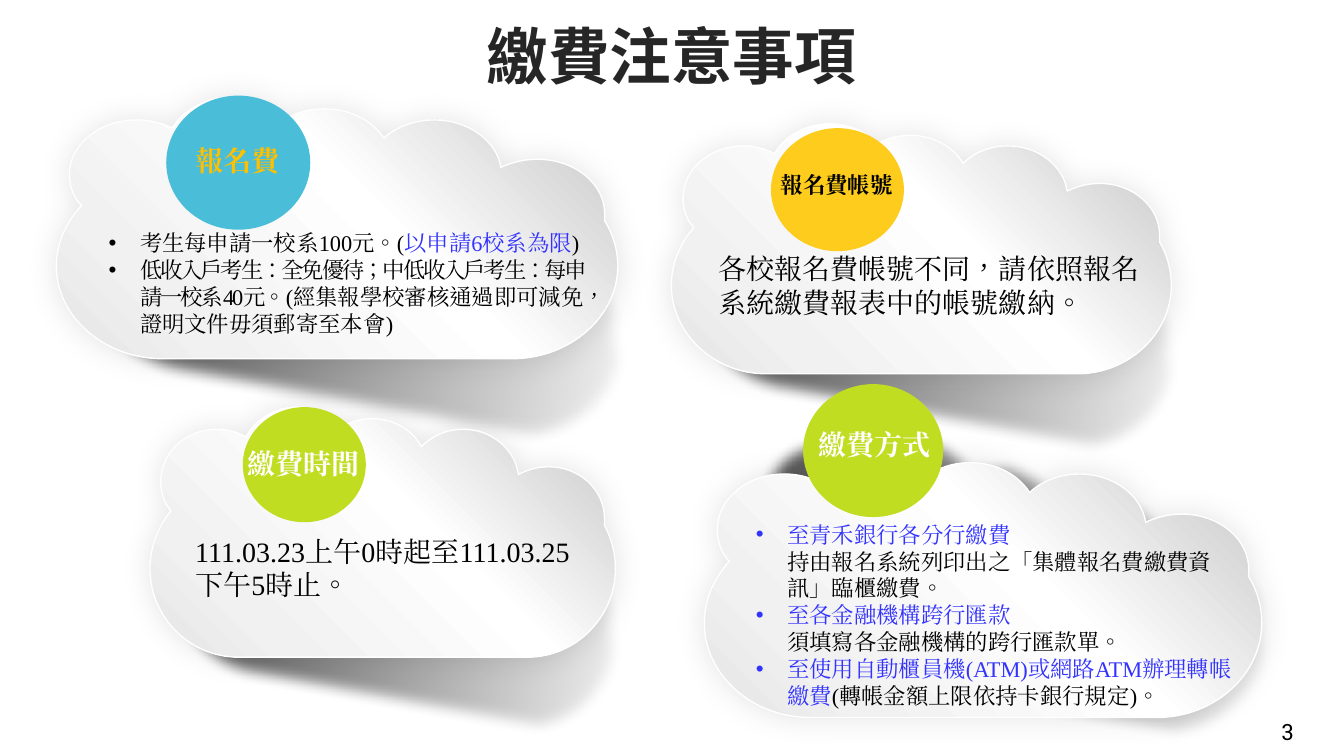
from dataclasses import dataclass
from typing import NamedTuple

from lxml import etree
from pptx import Presentation
from pptx.dml.color import RGBColor
from pptx.enum.shapes import MSO_SHAPE
from pptx.enum.text import MSO_ANCHOR, PP_ALIGN
from pptx.oxml import parse_xml
from pptx.oxml.ns import qn
from pptx.util import Cm, Pt

OVAL = MSO_SHAPE.OVAL
LEFT, CENTER = PP_ALIGN.LEFT, PP_ALIGN.CENTER
TOP, MIDDLE = MSO_ANCHOR.TOP, MSO_ANCHOR.MIDDLE
NAMESPACE = 'xmlns:a="http://schemas.openxmlformats.org/drawingml/2006/main"'
SERIF, SANS, SLAB = "Times New Roman", "Noto Sans CJK SC", "Roboto Slab"
BLACK, WHITE, BLUE, GOLD = "000000", "FFFFFF", "3333FF", "FFC000"
CYAN, YELLOW, LIME, CHARCOAL = "4ABDD9", "FDCC1C", "C1DD21", "262626"

CLOUD_WIDTH, CLOUD_HEIGHT = 557, 260
CLOUD_START = (176, 0)
CLOUD_SEGMENTS = (
    (198, 0, 217, 8, 229, 21),
    (240, 15, 252, 12, 266, 12),
    (292, 12, 314, 24, 325, 41),
    (337, 30, 355, 23, 375, 23),
    (409, 23, 437, 44, 441, 70),
    (452, 65, 464, 62, 477, 62),
    (514, 62, 544, 86, 544, 116),
    (544, 118, 544, 121, 544, 123),
    (552, 136, 557, 151, 557, 168),
    (557, 218, 510, 260, 452, 260),
    (106, 260),
    (47, 260, 0, 218, 0, 168),
    (0, 145, 10, 124, 25, 108),
    (17, 100, 13, 89, 13, 77),
    (13, 47, 43, 23, 80, 23),
    (93, 23, 105, 26, 115, 31),
    (126, 13, 149, 0, 176, 0),
)


class Box(NamedTuple):
    left: float
    top: float
    width: float
    height: float

    def lengths(self):
        return [Cm(value) for value in self]


class Stop(NamedTuple):
    position: int
    color: str
    opacity: int = 100


class Span(NamedTuple):
    text: str
    color: str = BLACK
    spacing: float = 0


@dataclass
class Topic:
    cloud: Box
    shade_offset: tuple[float, float]
    badge: Box
    badge_color: str
    label: Box
    label_text: str
    label_color: str
    body: Box
    paragraphs: list[list[Span]]
    label_size: int = 20
    label_align: PP_ALIGN = LEFT
    body_size: int = 20
    bulleted: bool = False


CLOUD_STOPS = [Stop(6, "CCCCCC"), Stop(43, WHITE), Stop(80, "F1F1F1"), Stop(100, "E4E4E4")]
SHADE_STOPS = [Stop(0, BLACK, 76), Stop(100, BLACK, 0)]
SHADE_ROTATION = 10.5
GLOW = ('<a:outerShdw %s blurRad="279400" dist="0" dir="0" algn="ctr" rotWithShape="0">'
        '<a:srgbClr val="000000"><a:alpha val="11000"/></a:srgbClr></a:outerShdw>' % NAMESPACE)
SOFT_EDGE = '<a:softEdge %s rad="127000"/>' % NAMESPACE

TOPICS = [
    Topic(Box(1.42, 2.44, 14.15, 6.6), (0.64, 1.45), Box(4.19, 2.41, 3.63, 3.38), CYAN,
          Box(4.11, 3.66, 3.76, 0.99), "報名費", GOLD, Box(2.49, 5.66, 12.93, 3.68),
          [[Span("考生每申請一校系100元。("), Span("以申請6校系為限", BLUE), Span(")")],
           [Span("低收入戶考生：全免優待；中低收入戶考生：每申請一校系40元。", spacing=-1.5),
            Span("(經集報學校審核通過即可減免，證明文件毋須郵寄至本會)")]],
          label_align=CENTER, body_size=16, bulleted=True),
    Topic(Box(16.92, 3.12, 12.6, 6.3), (0.56, 1.4), Box(19.43, 3.23, 3.35, 3.1), YELLOW,
          Box(19.43, 4.32, 4.22, 0.81), "報名費帳號", BLACK, Box(17.86, 6.22, 11.38, 1.96),
          [[Span("各校報名費帳號不同，請依照報名系統繳費報表中的帳號繳納。")]], label_size=16),
    Topic(Box(3.78, 10.26, 11.73, 6.3), (0.53, 1.4), Box(6.12, 10.26, 3.1, 2.9), LIME,
          Box(5.99, 11.3, 3.48, 0.94), "繳費時間", WHITE, Box(4.67, 13.34, 10.59, 1.96),
          [[Span("111.03.23上午0時起至111.03.25下午5時止。")]]),
    Topic(Box(17.75, 11.35, 14.05, 6.73), (0.64, -0.15), Box(20.24, 9.68, 3.53, 3.35), LIME,
          Box(20.37, 10.82, 4.17, 1.02), "繳費方式", WHITE, Box(18.8, 13, 12.67, 5.05),
          [[Span("至青禾銀行各分行繳費\n", BLUE),
            Span("持由報名系統列印出之「集體報名費繳費資訊」臨櫃繳費。")],
           [Span("至各金融機構跨行匯款\n", BLUE), Span("須填寫各金融機構的跨行匯款單。")],
           [Span("至使用自動櫃員機(ATM)或網路ATM辦理轉帳繳費", BLUE),
            Span("(轉帳金額上限依持卡銀行規定)。")]],
          body_size=16, bulleted=True),
]


def rgb(color: str) -> RGBColor:
    return RGBColor.from_string(color)


def add_text(slide, box: Box, paragraphs: list[list[Span]], *, size: int, font: str = SERIF,
             bold: bool = False, align: PP_ALIGN = LEFT, anchor: MSO_ANCHOR = TOP,
             line_spacing: float = 1.0, bulleted: bool = False) -> None:
    frame = slide.shapes.add_textbox(*box.lengths()).text_frame
    frame.word_wrap = True
    frame.vertical_anchor = anchor
    for index, spans in enumerate(paragraphs):
        paragraph = frame.add_paragraph() if index else frame.paragraphs[0]
        paragraph.alignment = align
        paragraph.line_spacing = line_spacing
        if bulleted:
            properties = paragraph._p.get_or_add_pPr()
            properties.set("marL", str(Cm(0.79)))
            properties.set("indent", str(-Cm(0.79)))
            etree.SubElement(properties, qn("a:buFont"), typeface="Arial")
            etree.SubElement(properties, qn("a:buChar"), char="•")
        for span in spans:
            run = paragraph.add_run()
            run.text = span.text.rstrip("\n")
            run.font.size = Pt(size)
            run.font.bold = bold
            run.font.name = font
            run.font.color.rgb = rgb(span.color)
            properties = run._r.get_or_add_rPr()
            properties.set("lang", "zh-TW")
            properties.set("spc", str(int(span.spacing * 100)))
            etree.SubElement(properties, qn("a:ea"), typeface=font)
            if span.text.endswith("\n"):
                paragraph.add_line_break()


def set_gradient(shape, stops: list[Stop], angle: int) -> None:
    shape.fill.background()
    stop_xml = "".join(
        f'<a:gs pos="{stop.position * 1000}"><a:srgbClr val="{stop.color}">'
        f'<a:alpha val="{stop.opacity * 1000}"/></a:srgbClr></a:gs>' for stop in stops)
    gradient = parse_xml(f'<a:gradFill {NAMESPACE} rotWithShape="1"><a:gsLst>{stop_xml}</a:gsLst>'
                         f'<a:lin ang="{angle * 60000}" scaled="0"/></a:gradFill>')
    properties = shape._element.spPr
    properties.replace(properties.find(qn("a:noFill")), gradient)


def add_cloud(slide, box: Box, stops: list[Stop], angle: int, effect: str):
    left, top, width, height = box.lengths()
    builder = slide.shapes.build_freeform(0, 0)
    builder.add_line_segments([(width, 0), (width, height), (0, height)])
    shape = builder.convert_to_shape(left, top)
    outline = shape._element.spPr.find(".//" + qn("a:path"))
    outline.clear()
    outline.set("w", str(CLOUD_WIDTH))
    outline.set("h", str(CLOUD_HEIGHT))
    for segment in (CLOUD_START, *CLOUD_SEGMENTS):
        tag = "cubicBezTo" if len(segment) == 6 else "lnTo" if len(outline) else "moveTo"
        command = etree.SubElement(outline, qn("a:" + tag))
        for x, y in zip(segment[::2], segment[1::2]):
            etree.SubElement(command, qn("a:pt"), x=str(x), y=str(y))
    etree.SubElement(outline, qn("a:close"))
    set_gradient(shape, stops, angle)
    shape.line.fill.background()
    shape.shadow.inherit = False
    shape._element.spPr.find(qn("a:effectLst")).append(parse_xml(effect))
    return shape


def add_topic(slide, topic: Topic) -> None:
    across, down = topic.shade_offset
    shade_box = topic.cloud._replace(left=topic.cloud.left + across, top=topic.cloud.top + down)
    add_cloud(slide, shade_box, SHADE_STOPS, 0, SOFT_EDGE).rotation = SHADE_ROTATION
    cloud = add_cloud(slide, topic.cloud, CLOUD_STOPS, 135, GLOW)
    cloud.line.color.rgb = rgb(WHITE)
    cloud.line.width = Pt(1)
    badge = slide.shapes.add_shape(OVAL, *topic.badge.lengths())
    badge.fill.solid()
    badge.fill.fore_color.rgb = rgb(topic.badge_color)
    badge.line.fill.background()
    badge.shadow.inherit = False
    add_text(slide, topic.label, [[Span(topic.label_text, topic.label_color)]],
             size=topic.label_size, bold=True, align=topic.label_align, line_spacing=0.8)
    add_text(slide, topic.body, topic.paragraphs, size=topic.body_size, bulleted=topic.bulleted)


def main() -> None:
    presentation = Presentation()
    presentation.slide_width, presentation.slide_height = Cm(33.87), Cm(19.05)
    slide = presentation.slides.add_slide(presentation.slide_layouts[6])
    add_text(slide, Box(32.05, 17.98, 1.75, 0.94), [[Span("3")]], size=16, font=SLAB)
    add_text(slide, Box(5.38, 0.48, 23.09, 1.8), [[Span("繳費注意事項", CHARCOAL)]],
             size=44, font=SANS, bold=True, align=CENTER, anchor=MIDDLE)
    for topic in TOPICS:
        add_topic(slide, topic)
    presentation.save("out.pptx")


if __name__ == "__main__":
    main()
